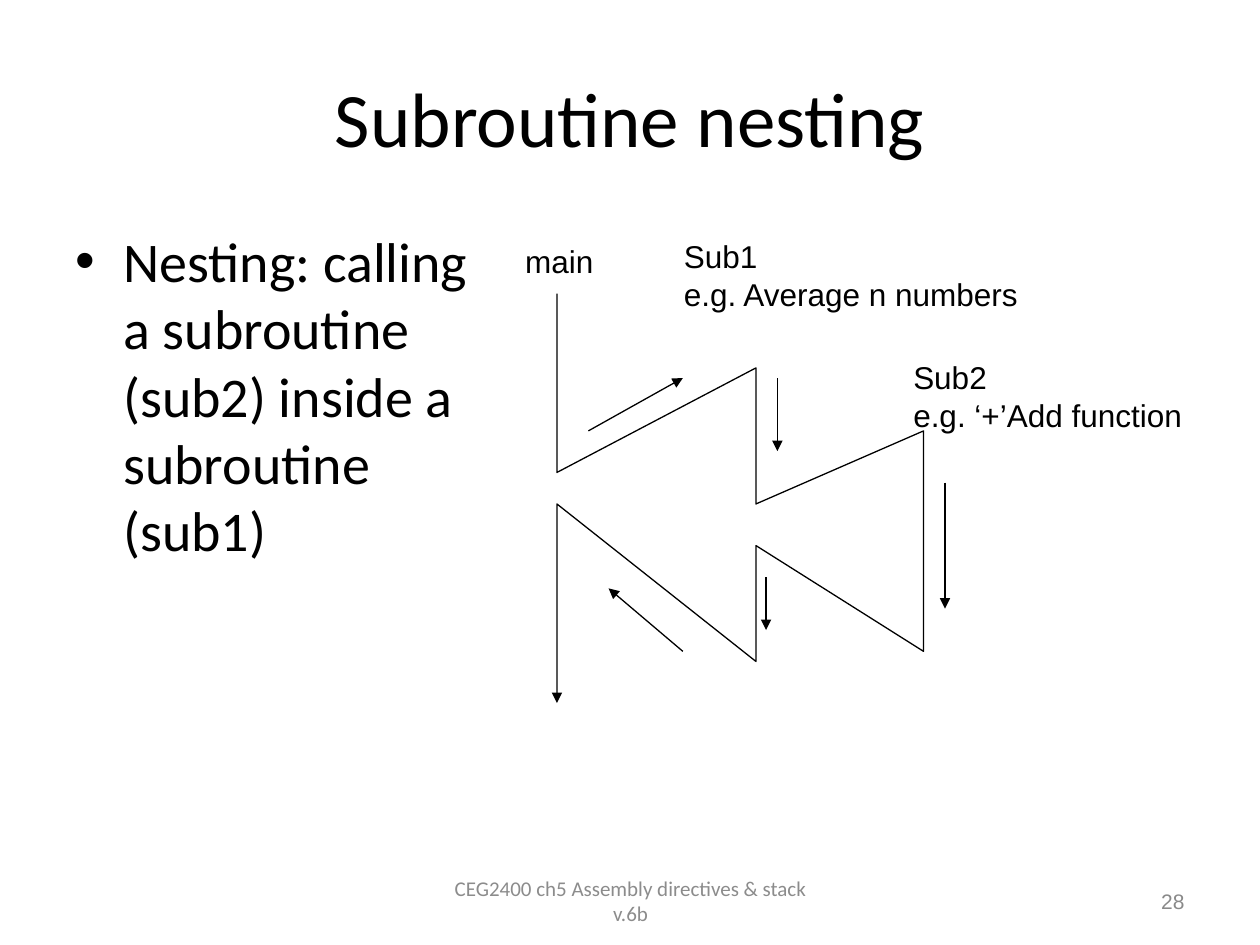
from lxml.etree import SubElement
from pptx import Presentation
from pptx.dml.color import RGBColor
from pptx.enum.shapes import MSO_CONNECTOR
from pptx.enum.text import MSO_ANCHOR, MSO_AUTO_SIZE, PP_ALIGN
from pptx.oxml.ns import qn
from pptx.util import Inches, Pt

BLACK = "000000"

# Call path: main -> Sub1 -> Sub2 -> Sub1 -> main
CALL_PATH = [
    (4.42, 2.33), (4.42, 3.75), (6, 2.92), (6, 4), (7.33, 3.42),
    (7.33, 5.17), (6, 4.33), (6, 5.25), (4.42, 4), (4.42, 5.58),
]
DIRECTION_ARROWS = [
    ((7.5, 3.83), (7.5, 4.83)),
    ((6.17, 3), (6.17, 3.58)),
    ((6.08, 4.58), (6.08, 5)),
    ((5.42, 5.17), (4.83, 4.67)),
    ((4.67, 3.42), (5.42, 3)),
]
ROUTINE_LABELS = [
    ("Sub1\ne.g. Average n numbers", (5.33, 1.83, 2.87, 0.7)),
    ("Sub2\ne.g. ‘+’Add function", (7.15, 2.79, 2.33, 0.7)),
    ("main", (4.07, 1.87, 0.74, 0.4)),
]


def color(hex_string):
    return RGBColor.from_string(hex_string)


def add_text(slide, text, box, size=18, font="Arial", fill=BLACK,
             align=PP_ALIGN.LEFT, anchor=MSO_ANCHOR.TOP, wrap=True):
    shape = slide.shapes.add_textbox(*map(Inches, box))
    frame = shape.text_frame
    frame.word_wrap = wrap
    frame.auto_size = MSO_AUTO_SIZE.NONE if wrap else MSO_AUTO_SIZE.SHAPE_TO_FIT_TEXT
    frame.vertical_anchor = anchor
    frame.text = text
    for paragraph in frame.paragraphs:
        paragraph.alignment = align
        paragraph.font.size = Pt(size)
        paragraph.font.name = font
        paragraph.font.color.rgb = color(fill)
        for run in paragraph.runs:
            run.font.size = Pt(size)
            run.font.name = font
            run.font.color.rgb = color(fill)
    return shape


def add_bullet(paragraph, indent=0.38):
    paragraph.space_before = Pt(6.4)
    properties = paragraph._p.get_or_add_pPr()
    properties.set("marL", str(Inches(indent)))
    properties.set("indent", str(-Inches(indent)))
    bullet_font = properties.makeelement(qn("a:buFont"), {"typeface": "Arial"})
    bullet = properties.makeelement(qn("a:buChar"), {"char": "•"})
    # Bullets come after the spacing and before the default run format
    position = properties.index(properties.find(qn("a:spcBef"))) + 1
    properties.insert(position, bullet_font)
    properties.insert(position + 1, bullet)


def style_arrow(line):
    line.color.rgb = color(BLACK)
    line.width = Pt(0.75)
    SubElement(line._get_or_add_ln(), qn("a:tailEnd"), type="triangle")


def add_arrow(slide, start, end):
    connector = slide.shapes.add_connector(
        MSO_CONNECTOR.STRAIGHT, *map(Inches, (*start, *end)))
    style_arrow(connector.line)
    SubElement(connector._element.spPr, qn("a:effectLst"))


def add_path(slide, points):
    start, *others = [(Inches(x), Inches(y)) for x, y in points]
    builder = slide.shapes.build_freeform(*start)
    builder.add_line_segments(others, close=False)
    shape = builder.convert_to_shape()
    shape.shadow.inherit = False
    shape.fill.background()
    style_arrow(shape.line)


def main():
    presentation = Presentation()
    presentation.slide_width = Inches(10)
    presentation.slide_height = Inches(7.5)
    slide = presentation.slides.add_slide(presentation.slide_layouts[6])

    # Title and explanation
    add_text(slide, "Subroutine nesting", (0.5, 0.3, 9, 1.25), size=44,
             font="Calibri", align=PP_ALIGN.CENTER, anchor=MSO_ANCHOR.MIDDLE)
    body = add_text(
        slide, "Nesting: calling a subroutine (sub2) inside a subroutine (sub1)",
        (0.5, 1.75, 3.5, 4.95), size=32, font="Calibri")
    add_bullet(body.text_frame.paragraphs[0])

    # Footer and slide number
    add_text(slide, "CEG2400 ch5 Assembly directives & stack v.6b",
             (3.42, 6.95, 3.17, 0.4), size=12, font="Calibri", fill="8C8C8C",
             align=PP_ALIGN.CENTER, anchor=MSO_ANCHOR.MIDDLE)
    add_text(slide, "28", (7.17, 6.95, 2.33, 0.4), size=12, fill="898989",
             align=PP_ALIGN.RIGHT, anchor=MSO_ANCHOR.MIDDLE)

    # Call diagram
    add_path(slide, CALL_PATH)
    for text, box in ROUTINE_LABELS:
        add_text(slide, text, box, wrap=False)
    for start, end in DIRECTION_ARROWS:
        add_arrow(slide, start, end)

    presentation.save("out.pptx")


if __name__ == "__main__":
    main()
